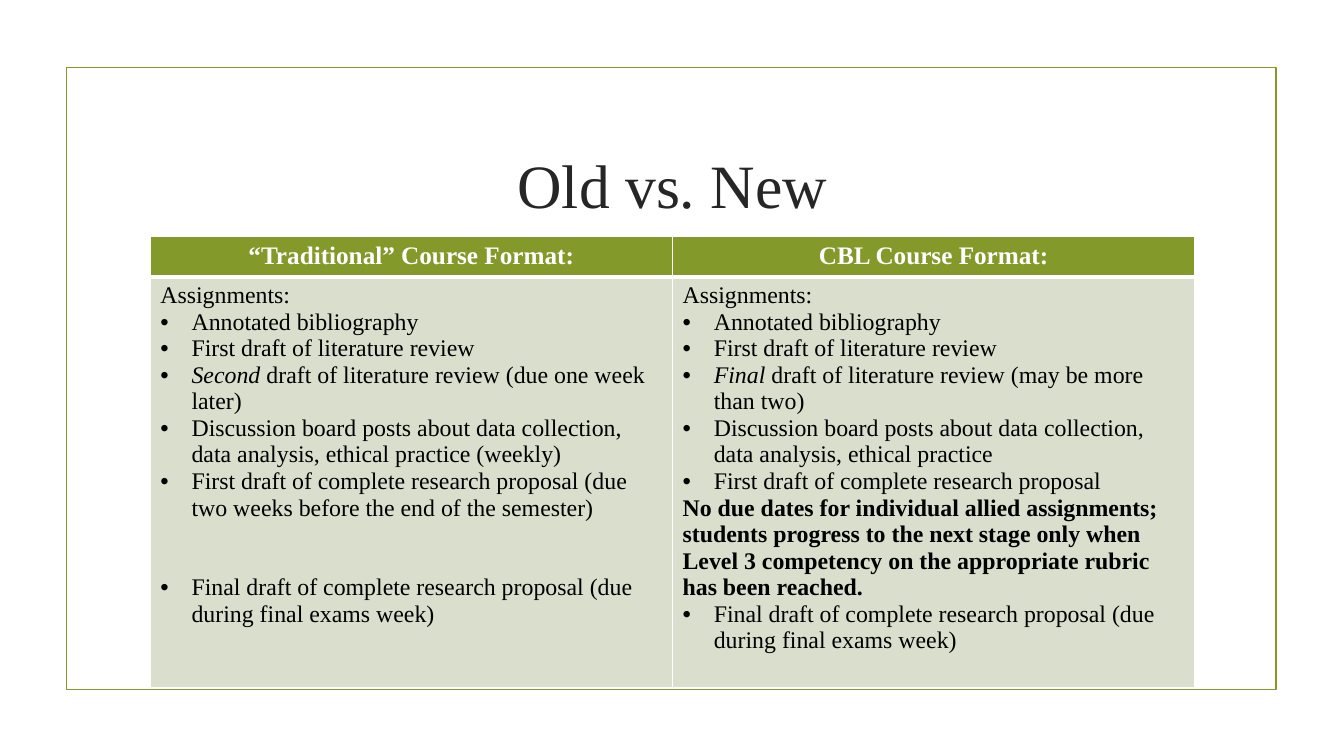
from lxml.etree import SubElement
from pptx import Presentation
from pptx.dml.color import RGBColor
from pptx.enum.shapes import MSO_SHAPE
from pptx.enum.text import MSO_ANCHOR, PP_ALIGN
from pptx.oxml import parse_xml
from pptx.oxml.ns import nsdecls, qn
from pptx.util import Inches, Pt

GREEN, SAGE, WHITE, BLACK, CHARCOAL = "83992A", "D9DECD", "FFFFFF", "000000", "262626"

HEADINGS = ["“Traditional” Course Format:", "CBL Course Format:"]
FINAL_DRAFT = "Final draft of complete research proposal (due during final exams week)"
SHARED_START = ["Annotated bibliography", "First draft of literature review"]
POSTS = "Discussion board posts about data collection, data analysis, ethical practice"
PROPOSAL = "First draft of complete research proposal"
NO_DUE_DATES = ("No due dates for individual allied assignments; students progress to the next "
                "stage only when Level 3 competency on the appropriate rubric has been reached.")

# An item is a text, or a pair of an italic lead word and the text after it.
TRADITIONAL = SHARED_START + [
    ("Second", " draft of literature review (due one week later)"),
    POSTS + " (weekly)",
    PROPOSAL + " (due two weeks before the end of the semester)",
]
CBL = SHARED_START + [
    ("Final", " draft of literature review (may be more than two)"),
    POSTS,
    PROPOSAL,
]


def color(hex_string):
    return RGBColor.from_string(hex_string)


class ComparisonSlide:
    font_name = "Times New Roman"
    body_size = 17

    def __init__(self, presentation):
        self.slide = presentation.slides.add_slide(presentation.slide_layouts[6])

    def style(self, paragraph, size, hex_color, bold=False):
        font = paragraph.font
        font.name, font.size, font.bold = self.font_name, Pt(size), bold
        font.color.rgb = color(hex_color)

    def frame(self, left, top, width, height):
        border = self.slide.shapes.add_shape(
            MSO_SHAPE.RECTANGLE, Inches(left), Inches(top), Inches(width), Inches(height))
        border.shadow.inherit = False
        border.fill.background()
        border.line.color.rgb = color(GREEN)
        border.line.width = Pt(1.25)

    def title(self, text, left, top, width, height):
        text_frame = self.slide.shapes.add_textbox(
            Inches(left), Inches(top), Inches(width), Inches(height)).text_frame
        text_frame.word_wrap = True
        text_frame.vertical_anchor = MSO_ANCHOR.MIDDLE
        heading = text_frame.paragraphs[0]
        heading.text = text
        heading.alignment = PP_ALIGN.CENTER
        self.style(heading, 44, CHARCOAL)

    def table(self, left, top, column_width, row_heights):
        table = self.slide.shapes.add_table(
            len(row_heights), 2, Inches(left), Inches(top),
            Inches(2 * column_width), Inches(sum(row_heights))).table
        table.horz_banding = False
        for column in table.columns:
            column.width = Inches(column_width)
        for row, height in zip(table.rows, row_heights):
            row.height = Inches(height)
        return table

    def cell_look(self, cell, fill, top_border, bottom_border):
        properties = cell._tc.get_or_add_tcPr()
        widths = {"lnL": 1, "lnR": 1, "lnT": top_border, "lnB": bottom_border}
        for position, (side, width) in enumerate(widths.items()):
            properties.insert(position, parse_xml(
                f'<a:{side} {nsdecls("a")} w="{Pt(width)}"><a:solidFill>'
                f'<a:srgbClr val="{WHITE}"/></a:solidFill></a:{side}>'))
        cell.fill.solid()
        cell.fill.fore_color.rgb = color(fill)

    def header(self, cell, text):
        self.cell_look(cell, GREEN, 1, 3)
        heading = cell.text_frame.paragraphs[0]
        heading.text = text
        heading.alignment = PP_ALIGN.CENTER
        self.style(heading, 18, WHITE, bold=True)

    def bullet(self, cell, item):
        paragraph = cell.text_frame.add_paragraph()
        properties = paragraph._p.get_or_add_pPr()
        properties.set("marL", str(Inches(0.31)))
        properties.set("indent", str(Inches(-0.31)))
        SubElement(properties, qn("a:buFont")).set("typeface", "Arial")
        SubElement(properties, qn("a:buChar")).set("char", "•")
        if isinstance(item, tuple):
            lead, rest = item
            lead_run = paragraph.add_run()
            lead_run.text = lead
            lead_run.font.italic = True
            paragraph.add_run().text = rest
        else:
            paragraph.text = item
        self.style(paragraph, self.body_size, BLACK)
        return paragraph

    def assignments(self, cell, items, note=None):
        """Fill a body cell; without a note, leave two lines before the final draft."""
        self.cell_look(cell, SAGE, 3, 1)
        intro = cell.text_frame.paragraphs[0]
        intro.text = "Assignments:"
        self.style(intro, self.body_size, BLACK)
        for item in items:
            self.bullet(cell, item)
        if note:
            remark = cell.text_frame.add_paragraph()
            remark.text = note
            self.style(remark, self.body_size, BLACK, bold=True)
        final_draft = self.bullet(cell, FINAL_DRAFT)
        if not note:
            final_draft.space_before = Pt(38)


def main():
    presentation = Presentation()
    presentation.slide_width, presentation.slide_height = Inches(13.33), Inches(7.5)
    page = ComparisonSlide(presentation)
    page.frame(0.66, 0.67, 12, 6.17)
    page.title("Old vs. New", 1.42, 1.07, 10.5, 1.5)
    formats = page.table(1.49, 2.35, 5.18, [0.39, 3.78])
    for column, heading in enumerate(HEADINGS):
        page.header(formats.cell(0, column), heading)
    page.assignments(formats.cell(1, 0), TRADITIONAL)
    page.assignments(formats.cell(1, 1), CBL, note=NO_DUE_DATES)
    presentation.save("out.pptx")


if __name__ == "__main__":
    main()
